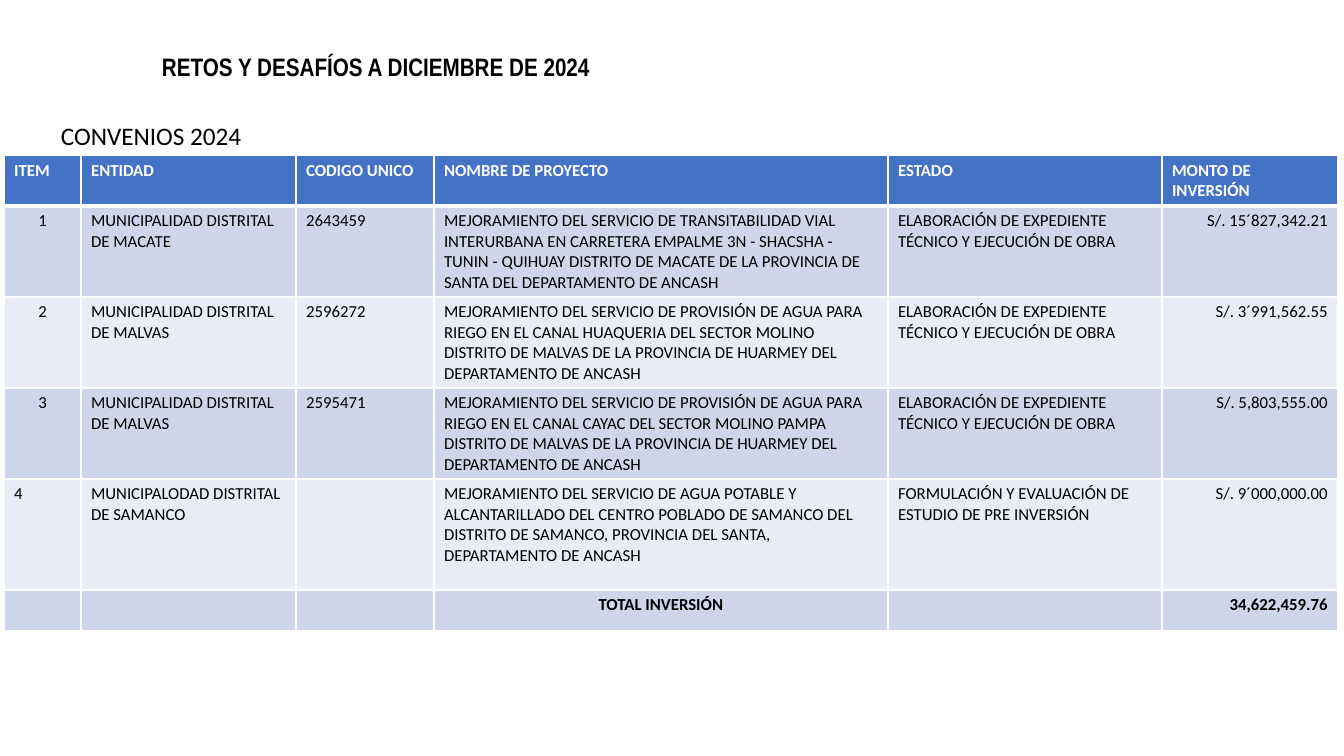
from dataclasses import dataclass

from lxml.etree import SubElement
from pptx import Presentation
from pptx.dml.color import RGBColor
from pptx.enum.text import MSO_AUTO_SIZE, PP_ALIGN
from pptx.oxml.ns import qn
from pptx.util import Pt

PX = 914400 / 100.8  # EMU in one px


@dataclass(frozen=True)
class Theme:
    font: str = "Calibri"
    narrow: str = "Arial Narrow"
    ink: str = "000000"
    white: str = "FFFFFF"
    head: str = "4472C4"
    bands: tuple = ("CFD5EA", "E9EBF5")
    title: int = 18
    body: int = 12
    rule: int = 1
    thick: int = 3


THEME = Theme()
LEFT, MID, RIGHT = PP_ALIGN.LEFT, PP_ALIGN.CENTER, PP_ALIGN.RIGHT

# text, (left, top, width, height), wrap, run style
LABELS = [
    ("RETOS Y DESAFÍOS A DICIEMBRE DE 2024", (152, 46, 675, 40), True,
     dict(size=THEME.title, font=THEME.narrow, bold=True)),
    ("CONVENIOS 2024", (51, 115, 203, 40), False, dict(size=THEME.title)),
]

WORKS = "ELABORACIÓN DE EXPEDIENTE TÉCNICO Y EJECUCIÓN DE OBRA"
HEADS = ["ITEM", "ENTIDAD", "CODIGO UNICO", "NOMBRE DE PROYECTO", "ESTADO",
         "MONTO DE INVERSIÓN"]
DEALS = [
    ("1", "MUNICIPALIDAD DISTRITAL DE MACATE", "2643459",
     "MEJORAMIENTO DEL SERVICIO DE TRANSITABILIDAD VIAL INTERURBANA EN "
     "CARRETERA EMPALME 3N - SHACSHA - TUNIN - QUIHUAY DISTRITO DE MACATE "
     "DE LA PROVINCIA DE SANTA DEL DEPARTAMENTO DE ANCASH",
     WORKS, "S/. 15´827,342.21"),
    ("2", "MUNICIPALIDAD DISTRITAL DE MALVAS", "2596272",
     "MEJORAMIENTO DEL SERVICIO DE PROVISIÓN DE AGUA PARA RIEGO EN EL CANAL "
     "HUAQUERIA DEL SECTOR MOLINO DISTRITO DE MALVAS DE LA PROVINCIA DE "
     "HUARMEY DEL DEPARTAMENTO DE ANCASH",
     WORKS, "S/. 3´991,562.55"),
    ("3", "MUNICIPALIDAD DISTRITAL DE MALVAS", "2595471",
     "MEJORAMIENTO DEL SERVICIO DE PROVISIÓN DE AGUA PARA RIEGO EN EL CANAL "
     "CAYAC DEL SECTOR MOLINO PAMPA DISTRITO DE MALVAS DE LA PROVINCIA DE "
     "HUARMEY DEL DEPARTAMENTO DE ANCASH",
     WORKS, "S/. 5,803,555.00"),
    ("4", "MUNICIPALODAD DISTRITAL DE SAMANCO", "",
     "MEJORAMIENTO DEL SERVICIO DE AGUA POTABLE Y ALCANTARILLADO DEL CENTRO "
     "POBLADO DE SAMANCO DEL DISTRITO DE SAMANCO, PROVINCIA DEL SANTA, "
     "DEPARTAMENTO DE ANCASH",
     "FORMULACIÓN Y EVALUACIÓN DE ESTUDIO DE PRE INVERSIÓN",
     "S/. 9´000,000.00"),
]
TOTAL = ("", "", "", "TOTAL INVERSIÓN", "", "34,622,459.76")

GRID_AT = (4, 155)
COLS = [77, 215, 138, 454, 274, 176]
ROWS = [51, 91, 91, 91, 111, 40]
PLAIN = [LEFT] * 5 + [RIGHT]
ALIGNS = ([[LEFT] * 6] + [[MID] + PLAIN[1:]] * 3
          + [PLAIN, [LEFT] * 3 + [MID, LEFT, RIGHT]])


def emu(px):
    return round(px * PX)


def write(frame, text, size, font=THEME.font, color=THEME.ink,
          bold=False, align=LEFT):
    para = frame.paragraphs[0]
    para.alignment = align
    run = para.add_run()
    run.text = text
    run.font.name, run.font.size, run.font.bold = font, Pt(size), bold
    run.font.color.rgb = RGBColor.from_string(color)


def add_label(slide, text, box, wrap, style):
    frame = slide.shapes.add_textbox(*map(emu, box)).text_frame
    frame.word_wrap = wrap
    frame.auto_size = MSO_AUTO_SIZE.SHAPE_TO_FIT_TEXT
    write(frame, text, **style)


def edge(cell, top, bottom):
    """Set white borders; call before the fill, which must follow them."""
    props = cell._tc.get_or_add_tcPr()
    for side, width in zip("LRTB", (THEME.rule, THEME.rule, top, bottom)):
        line = SubElement(props, qn(f"a:ln{side}"), w=str(Pt(width)))
        paint = SubElement(line, qn("a:solidFill"))
        SubElement(paint, qn("a:srgbClr"), val=THEME.white)


def add_grid(slide):
    data = [HEADS, *DEALS, TOTAL]
    area = (*GRID_AT, sum(COLS), sum(ROWS))
    table = slide.shapes.add_table(
        len(ROWS), len(COLS), *map(emu, area)).table
    for col, width in zip(table.columns, COLS):
        col.width = emu(width)
    for r, (row, height) in enumerate(zip(table.rows, ROWS)):
        row.height = emu(height)
        head = r == 0
        fill = THEME.head if head else THEME.bands[(r - 1) % 2]
        top = THEME.thick if r == 1 else THEME.rule
        bottom = THEME.thick if head else THEME.rule
        for cell, text, align in zip(row.cells, data[r], ALIGNS[r]):
            edge(cell, top, bottom)
            cell.fill.solid()
            cell.fill.fore_color.rgb = RGBColor.from_string(fill)
            if text:
                write(cell.text_frame, text, THEME.body,
                      color=THEME.white if head else THEME.ink,
                      bold=head or data[r] is TOTAL, align=align)


def main():
    deck = Presentation()
    deck.slide_width, deck.slide_height = emu(1344), emu(756)
    slide = deck.slides.add_slide(deck.slide_layouts[6])
    for label in LABELS:
        add_label(slide, *label)
    add_grid(slide)
    deck.save("out.pptx")


if __name__ == "__main__":
    main()
